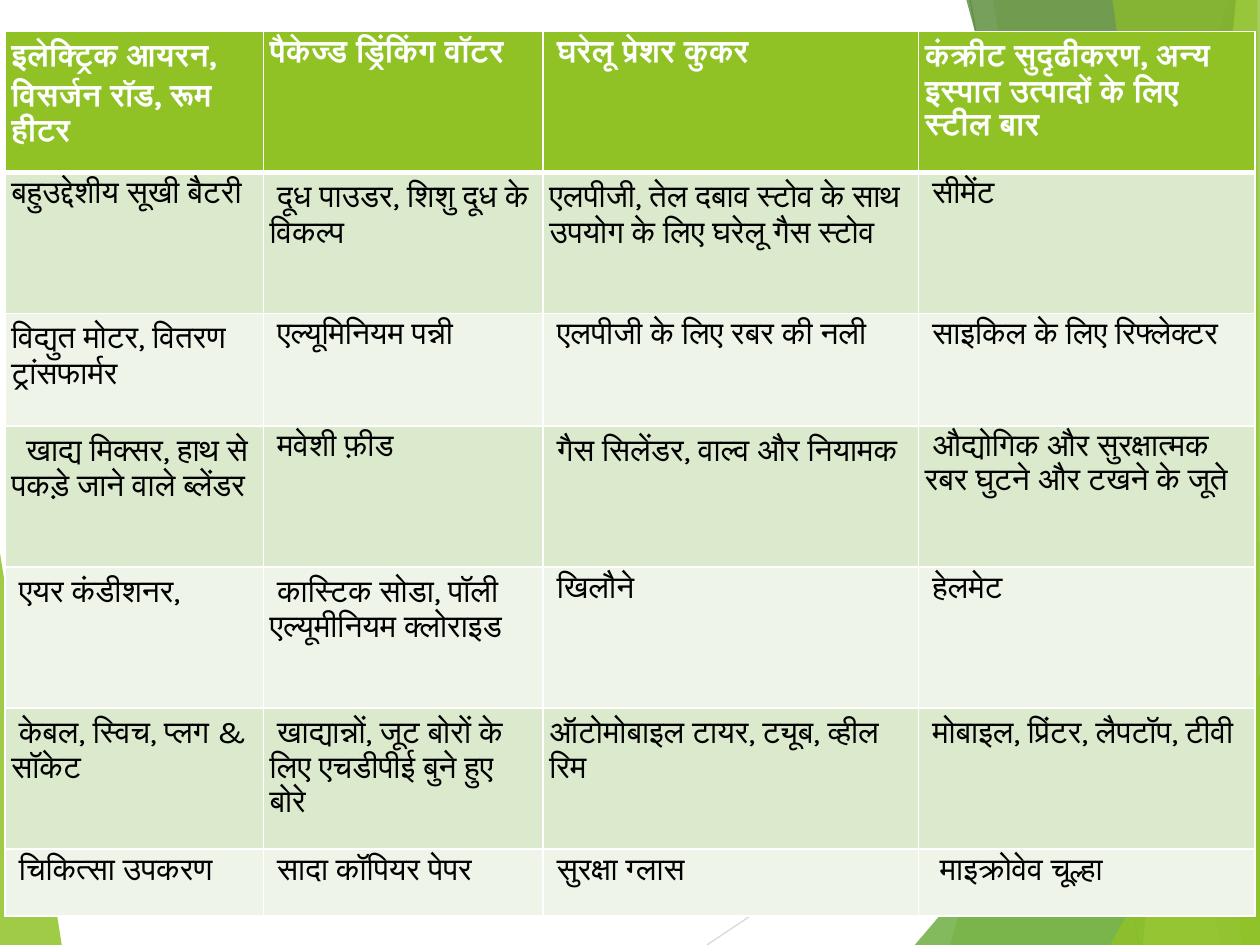
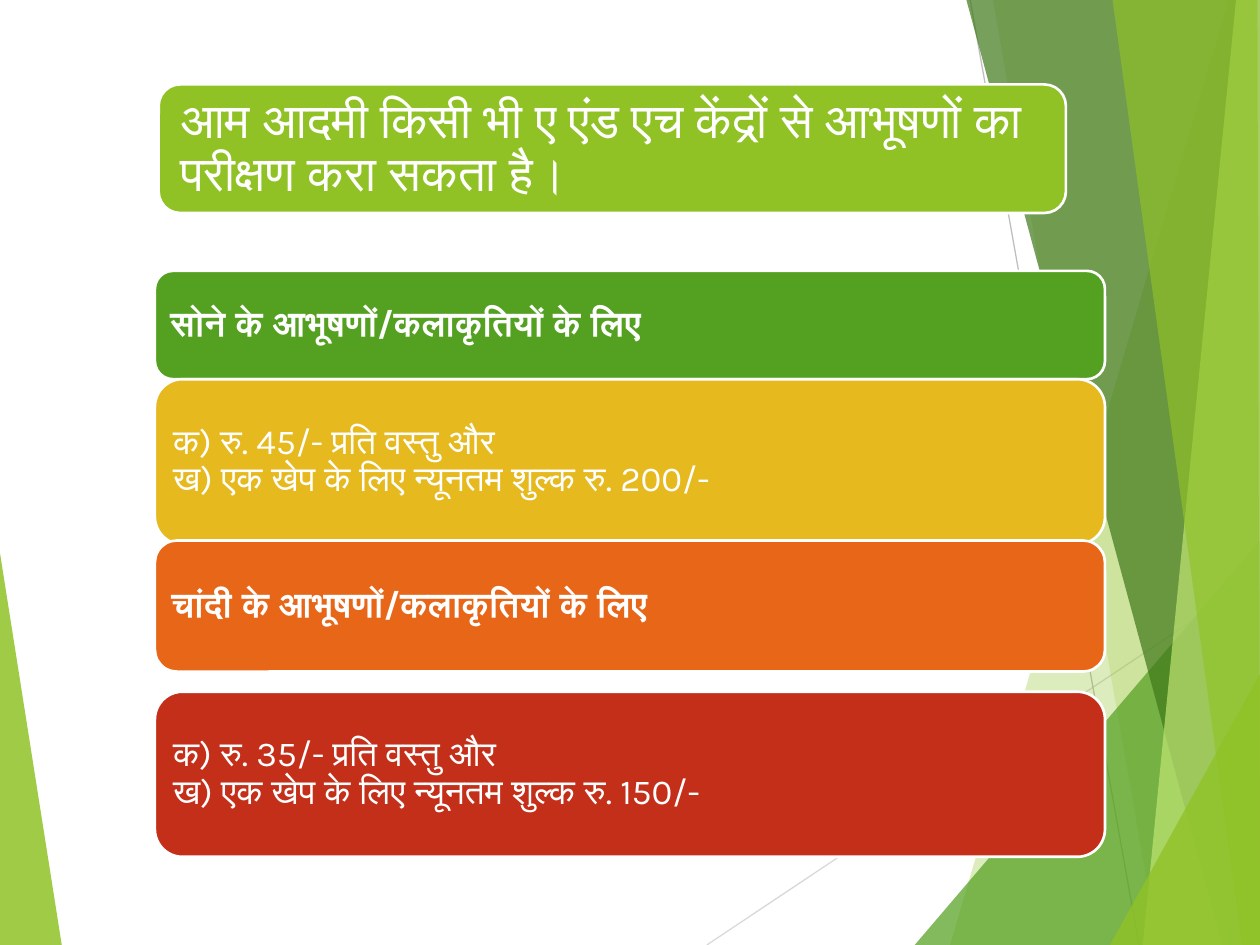
from lxml import etree
from pptx import Presentation
from pptx.dml.color import RGBColor
from pptx.enum.shapes import MSO_CONNECTOR, MSO_SHAPE
from pptx.enum.text import MSO_ANCHOR, MSO_AUTO_SIZE, PP_ALIGN
from pptx.oxml.ns import qn
from pptx.util import Inches, Pt

LINE = MSO_CONNECTOR.STRAIGHT
ROUND = MSO_SHAPE.ROUNDED_RECTANGLE
MIDDLE, TOP = MSO_ANCHOR.MIDDLE, MSO_ANCHOR.TOP
LEFT = PP_ALIGN.LEFT
FIXED = MSO_AUTO_SIZE.NONE
BLANK, TITLED = 6, 5
FONT = "Karla"
SPACE = 0.06  # indent, in inches, for each leading space of a cell

COLORS = {
    "white": "FFFFFF", "black": "000000", "lime": "90C226", "green": "54A021",
    "forest": "3F7819", "pale": "C0E474", "gold": "E6B91E", "orange": "E76618",
    "red": "C42F1A", "band": "DBE9CD", "light": "EEF4E8",
    "silver": "D9D9D9", "grey": "BFBFBF",
}

RAYS = [
    ("silver", (5.61, 7.5), (10, 4.57)),
    ("grey", (7.7, 0), (9.04, 7.5)),
]
WEDGE = ("lime", 85, [(0, 4.39), (0.49, 7.5), (0, 7.5)])
FACETS = [
    ("lime", 30, [(9.75, 0), (7.54, 7.5), (10, 7.5), (10, 0)]),
    ("lime", 20, [(7.88, 0), (9.19, 7.5), (10, 7.5), (10, 0)]),
    ("green", 72, [(7.26, 7.5), (10, 4.29), (10, 7.5)]),
    ("forest", 70, [(7.67, 0), (9.7, 7.5), (10, 7.5), (10, 0)]),
    ("pale", 70, [(9.81, 0), (9.07, 7.5), (10, 7.5), (10, 0)]),
    ("lime", 65, [(8.83, 0), (9.86, 7.5), (10, 7.5), (9.98, 0)]),
    ("lime", 80, [(8.81, 7.5), (10, 5.35), (10, 7.5)]),
]

WIDTHS = [2.05, 2.22, 2.98, 2.67]
HEIGHTS = [1.12, 1.12, 0.89, 1.12, 1.12, 1.12, 0.53]
GOODS = [
    ["इलेक्ट्रिक आयरन, विसर्जन रॉड, रूम हीटर", "पैकेज्ड ड्रिंकिंग वॉटर",
     " घरेलू प्रेशर कुकर", "कंक्रीट सुदृढीकरण, अन्य इस्पात उत्पादों के लिए स्टील बार"],
    ["बहुउद्देशीय सूखी बैटरी", " दूध पाउडर, शिशु दूध के विकल्प",
     "एलपीजी, तेल दबाव स्टोव के साथ उपयोग के लिए घरेलू गैस स्टोव", " सीमेंट"],
    ["विद्युत मोटर, वितरण ट्रांसफार्मर", " एल्यूमिनियम पन्नी",
     " एलपीजी के लिए रबर की नली", " साइकिल के लिए रिफ्लेक्टर"],
    ["  खाद्य मिक्सर, हाथ से पकड़े जाने वाले ब्लेंडर", " मवेशी फ़ीड",
     " गैस सिलेंडर, वाल्व और नियामक",
     " औद्योगिक और सुरक्षात्मक रबर घुटने और टखने के जूते"],
    [" एयर कंडीशनर,", " कास्टिक सोडा, पॉली एल्यूमीनियम क्लोराइड",
     " खिलौने", " हेलमेट"],
    [" केबल, स्विच, प्लग & सॉकेट",
     " खाद्यान्नों, जूट बोरों के लिए एचडीपीई बुने हुए बोरे",
     "ऑटोमोबाइल टायर, ट्यूब, व्हील रिम", " मोबाइल, प्रिंटर, लैपटॉप, टीवी"],
    [" चिकित्सा उपकरण", " सादा कॉपियर पेपर", " सुरक्षा ग्लास",
     "  माइक्रोवेव चूल्हा"],
]

TITLE = "आम आदमी किसी भी ए एंड एच केंद्रों से आभूषणों का परीक्षण करा सकता है।"
FEES = [  # top, height, colour, bold, text
    (2.15, 0.86, "green", True, "सोने के आभूषणों/कलाकृतियों के लिए"),
    (3.01, 1.31, "gold", False,
     "क) रु. 45/- प्रति वस्तु और\vख) एक खेप के लिए न्यूनतम शुल्क रु. 200/-"),
    (4.29, 1.04, "orange", True, "चांदी के आभूषणों/कलाकृतियों के लिए"),
    (5.49, 1.31, "red", False,
     "क) रु. 35/- प्रति वस्तु और\vख) एक खेप के लिए न्यूनतम शुल्क रु. 150/-"),
]


def rgb(name):
    return RGBColor.from_string(COLORS[name])


def paint(fill, name):
    fill.solid()
    fill.fore_color.rgb = rgb(name)


class Deck:
    """Holds the presentation, its style and the current slide."""

    def __init__(self):
        self.prs = Presentation()
        self.prs.slide_width, self.prs.slide_height = Inches(10), Inches(7.5)
        self.slide = None

    def start(self, layout):
        self.slide = self.prs.slides.add_slide(self.prs.slide_layouts[layout])

    def facet(self, color, alpha, points):
        """Draw a polygon with the given opacity in percent."""
        pts = [(Inches(x), Inches(y)) for x, y in points]
        form = self.slide.shapes.build_freeform(*pts[0], scale=1.0)
        form.add_line_segments(pts[1:], close=True)
        shape = form.convert_to_shape()
        shape.shadow.inherit = False
        shape.line.fill.background()
        paint(shape.fill, color)
        tint = shape._element.spPr.find(".//" + qn("a:srgbClr"))
        etree.SubElement(tint, qn("a:alpha"), val=str(alpha * 1000))
        return shape

    def ray(self, color, start, end):
        ends = [Inches(v) for v in (*start, *end)]
        line = self.slide.shapes.add_connector(LINE, *ends)
        line.line.color.rgb = rgb(color)
        line.line.width = Pt(0.75)
        etree.SubElement(line._element.spPr, qn("a:effectLst"))
        return line

    def backdrop(self):
        """Draw the facets once and move them to the master."""
        parts = [self.facet(*WEDGE)]
        parts += [self.ray(*ray) for ray in RAYS]
        parts += [self.facet(*facet) for facet in FACETS]
        tree = self.prs.slide_master.shapes._spTree
        for i, part in enumerate(parts):
            part._element.xpath(".//p:cNvPr")[0].set("id", str(100 + i))
            tree.insert(2 + i, part._element)

    def label(self, frame, text, size, color, bold=False, pad=0.08,
              anchor=MIDDLE, lead=0.9):
        """Fill a text frame with one left-aligned paragraph."""
        frame.word_wrap = True
        frame.auto_size = FIXED
        frame.vertical_anchor = anchor
        frame.margin_left = frame.margin_right = Inches(pad)
        frame.margin_top = frame.margin_bottom = Inches(pad)
        par = frame.paragraphs[0]
        par.text = text
        par.alignment = LEFT
        par.line_spacing = lead
        for run in par.runs:
            font = run.font
            font.name, font.size, font.bold = FONT, Pt(size), bold
            font.color.rgb = rgb(color)

    def card(self, left, top, width, height, color):
        box = [Inches(v) for v in (left, top, width, height)]
        shape = self.slide.shapes.add_shape(ROUND, *box)
        shape.shadow.inherit = False
        paint(shape.fill, color)
        shape.line.color.rgb = rgb("white")
        shape.line.width = Pt(1.5)
        return shape

    def title(self, text, left, top, width, height):
        """Place the title placeholder in front of a card."""
        self.card(left, top, width, height, "lime")
        head, gap = self.slide.shapes.title, 0.05
        head.left, head.top = Inches(left + gap), Inches(top + gap)
        head.width, head.height = Inches(width - 2 * gap), Inches(height - 2 * gap)
        self.label(head.text_frame, text, 28, "white", pad=0.12)
        self.slide.shapes._spTree.append(head._element)

    def edge(self, cell, side, width):
        """Draw one white side of a cell: L, R, T or B."""
        props = cell._tc.get_or_add_tcPr()
        line = etree.SubElement(props, qn("a:ln" + side), w=str(Pt(width)))
        fill = etree.SubElement(line, qn("a:solidFill"))
        etree.SubElement(fill, qn("a:srgbClr"), val=COLORS["white"])

    def cell(self, cell, text, row):
        head = row == 0
        widths = {"L": 1, "R": 1, "T": 3 if row == 1 else 1, "B": 3 if head else 1}
        for side, width in widths.items():
            self.edge(cell, side, width)
        paint(cell.fill, "lime" if head else "band" if row % 2 else "light")
        word = text.lstrip()
        self.label(cell.text_frame, word, 18, "white" if head else "black",
                   bold=head, lead=1.07)
        cell.vertical_anchor = TOP
        cell.margin_left = cell.margin_right = Inches(0.05)
        cell.margin_top = cell.margin_bottom = Inches(0.03)
        par = cell.text_frame.paragraphs[0]
        par.space_after = Pt(8)
        dent = Inches(SPACE * (len(text) - len(word)))
        par._p.get_or_add_pPr().set("indent", str(dent))

    def table(self, left, top, widths, heights, rows):
        box = [Inches(v) for v in (left, top, sum(widths), sum(heights))]
        grid = self.slide.shapes.add_table(len(rows), len(widths), *box).table
        for col, width in zip(grid.columns, widths):
            col.width = Inches(width)
        for r, texts in enumerate(rows):
            grid.rows[r].height = Inches(heights[r])
            for c, text in enumerate(texts):
                self.cell(grid.cell(r, c), text, r)


def main():
    deck = Deck()
    deck.start(BLANK)
    deck.backdrop()
    deck.table(0.04, 0.25, WIDTHS, HEIGHTS, GOODS)

    deck.start(TITLED)
    deck.title(TITLE, 1.26, 0.67, 7.2, 1.02)
    for top, height, color, bold, text in FEES:
        card = deck.card(1.23, top, 7.54, height, color)
        deck.label(card.text_frame, text, 20, "white", bold)
    deck.prs.save("out.pptx")


if __name__ == "__main__":
    main()
